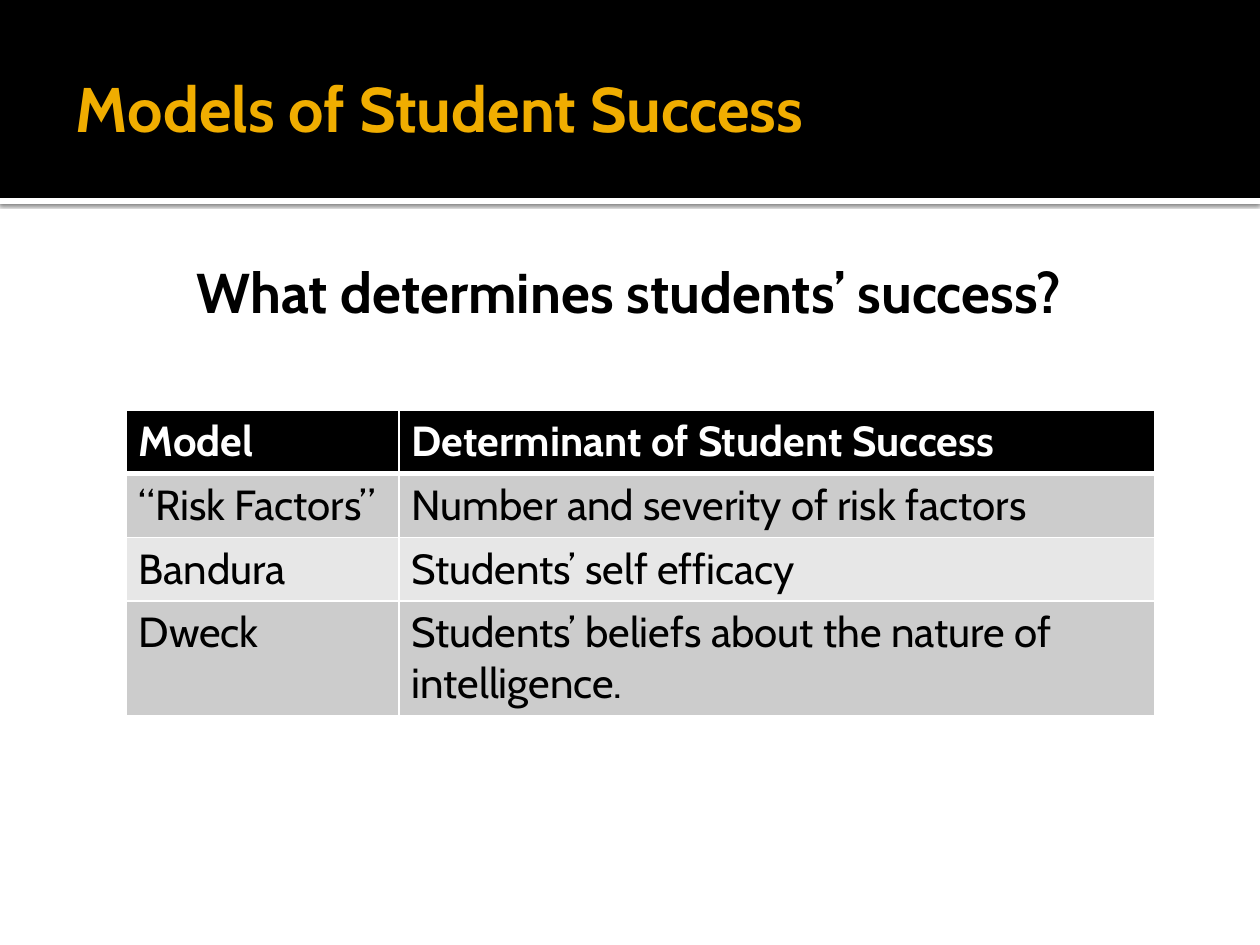
from lxml.etree import SubElement
from pptx import Presentation
from pptx.dml.color import RGBColor
from pptx.enum.shapes import MSO_SHAPE
from pptx.enum.text import MSO_ANCHOR, MSO_AUTO_SIZE, PP_ALIGN
from pptx.oxml import parse_xml
from pptx.oxml.ns import nsdecls, qn
from pptx.util import Pt

SCALE = 914400 / 126
FONT = "Cabin"
COLORS = {"black": "000000", "white": "FFFFFF", "gold": "F0AD00",
          "odd": "CCCCCC", "even": "E7E7E7"}
ROWS = [("Model", "Determinant of Student Success"),
        ("“Risk Factors”", "Number and severity of risk factors"),
        ("Bandura", "Students’ self efficacy"),
        ("Dweck", "Students’ beliefs about the nature of intelligence.")]


def px(n):
    return round(n * SCALE)


def paint(fill, color):
    fill.solid()
    fill.fore_color.rgb = RGBColor.from_string(COLORS[color])


def write(frame, text, size=24, color="black", bold=False, align=PP_ALIGN.LEFT):
    para = frame.paragraphs[0]
    para.alignment = align
    para.space_before = Pt(0)
    run = para.add_run()
    run.text = text
    font = run.font
    font.name, font.size, font.bold = FONT, Pt(size), bold
    font.color.rgb = RGBColor.from_string(COLORS[color])
    return para


def place(shape, box, insets, anchor):
    shape.left, shape.top, shape.width, shape.height = map(px, box)
    frame = shape.text_frame
    frame.auto_size = MSO_AUTO_SIZE.NONE
    frame.word_wrap = True
    frame.vertical_anchor = anchor
    (frame.margin_left, frame.margin_top,
     frame.margin_right, frame.margin_bottom) = map(px, insets)
    return frame


def bar(slide, box, color, depth):
    shape = slide.shapes.add_shape(MSO_SHAPE.RECTANGLE, *map(px, box))
    shape.shadow.inherit = False
    paint(shape.fill, color)
    shape.line.fill.background()
    # Send behind the placeholders
    slide.shapes._spTree.insert(2 + depth, shape._element)
    return shape


def header(slide, box):
    left, top, width, height = box
    # White strip with a soft shadow below the black band
    strip = bar(slide, (left, top + height, width, 6), "white", 0)
    effects = strip._element.spPr.find(qn("a:effectLst"))
    effects.append(parse_xml(
        f'<a:outerShdw {nsdecls("a")} blurRad="{px(4)}" dist="{px(1)}" '
        'dir="5400000" algn="t" rotWithShape="0"><a:srgbClr val="000000">'
        '<a:alpha val="60000"/></a:srgbClr></a:outerShdw>'))
    bar(slide, box, "black", 1)
    # Title
    frame = place(slide.shapes.title, (left + 63, top + 21, width - 126, 173),
                  (13, 6, 6, 6), MSO_ANCHOR.MIDDLE)
    write(frame, "Models of Student Success", size=36, color="gold", bold=True)


def question(slide, box):
    frame = place(slide.placeholders[1], box, (8, 13, 13, 6), MSO_ANCHOR.TOP)
    para = write(frame, "What determines students’ success? ", size=32,
                 bold=True, align=PP_ALIGN.CENTER)
    props = para._p.get_or_add_pPr()
    props.set("marL", str(px(60)))
    props.set("indent", str(px(-44)))
    SubElement(props, qn("a:buNone"))


def edge(cell, bottom):
    props = cell._tc.get_or_add_tcPr()
    for spot, side in enumerate("LRTB"):
        width = Pt(bottom if side == "B" else 1)
        props.insert(spot, parse_xml(
            f'<a:ln{side} {nsdecls("a")} w="{width}"><a:solidFill>'
            f'<a:srgbClr val="{COLORS["white"]}"/></a:solidFill></a:ln{side}>'))


def models(slide, box):
    grid = slide.shapes.add_table(len(ROWS), 2, *map(px, box)).table
    for col, width in zip(grid.columns, (273, box[2] - 273)):
        col.width = px(width)
    for r, row in enumerate(ROWS):
        head = r == 0
        grid.rows[r].height = px(100 if r == len(ROWS) - 1 else 58)
        for c, text in enumerate(row):
            cell = grid.cell(r, c)
            paint(cell.fill, "black" if head else "odd" if r % 2 else "even")
            write(cell.text_frame, text, bold=head,
                  color="white" if head else "black")
            edge(cell, 3 if head else 1)


def main():
    deck = Presentation()
    deck.slide_width, deck.slide_height = px(1260), px(945)
    slide = deck.slides.add_slide(deck.slide_layouts[1])
    header(slide, (0, 0, 1260, 198))
    question(slide, (63, 244, 1134, 638))
    models(slide, (126, 410, 1029, 274))
    deck.save("out.pptx")


if __name__ == "__main__":
    main()
